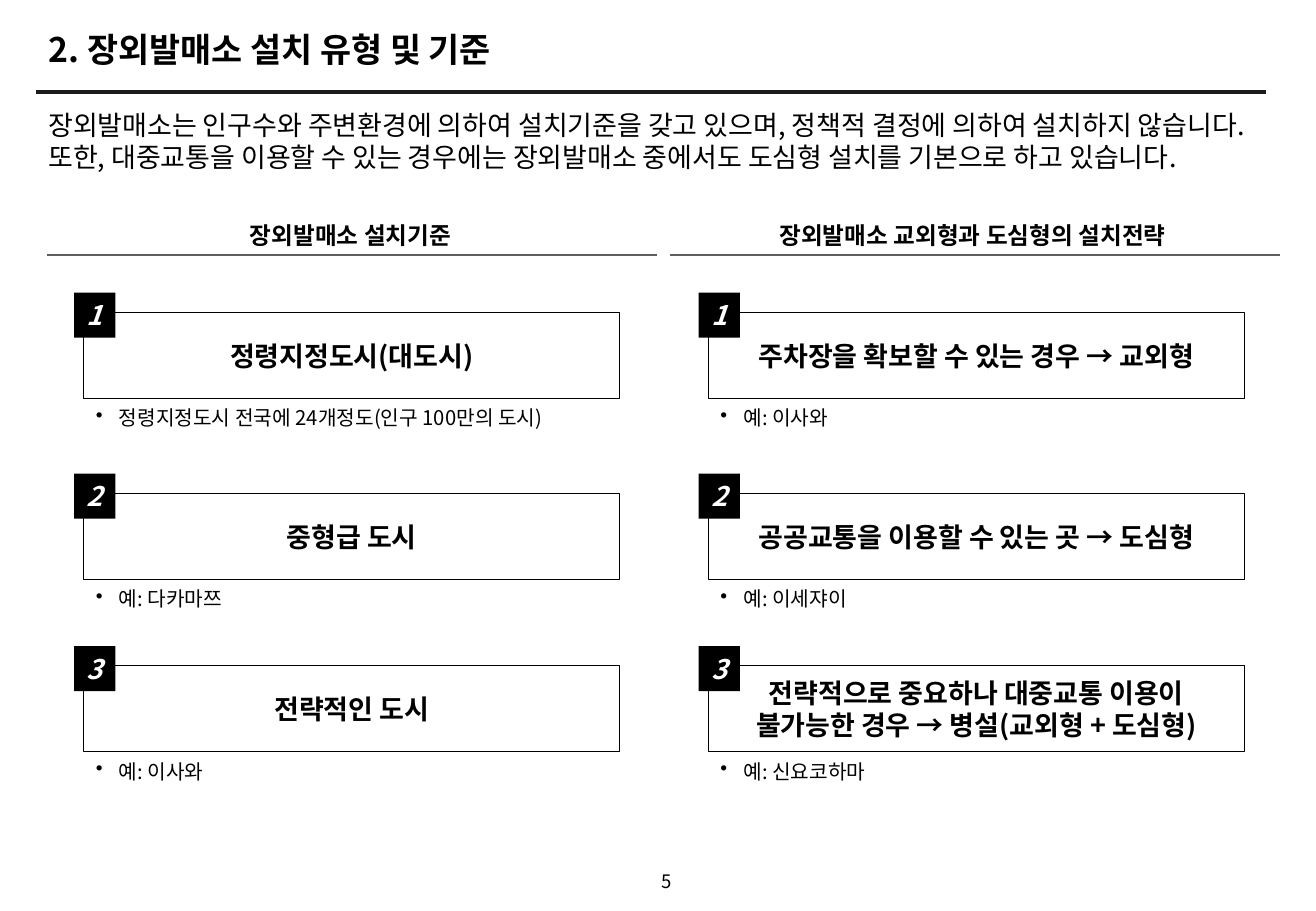
from lxml.etree import SubElement
from pptx import Presentation
from pptx.dml.color import RGBColor
from pptx.enum.shapes import MSO_CONNECTOR, MSO_SHAPE
from pptx.enum.text import MSO_ANCHOR, MSO_AUTO_SIZE, PP_ALIGN
from pptx.oxml.ns import qn
from pptx.util import Inches, Pt

BLACK = RGBColor(0x00, 0x00, 0x00)
WHITE = RGBColor(0xFF, 0xFF, 0xFF)
RULE_DARK = RGBColor(0x1C, 0x1C, 0x1C)
RULE_GRAY = RGBColor(0x5F, 0x5F, 0x5F)
FONT = "Noto Sans CJK KR"

INTRO = (
    "장외발매소는 인구수와 주변환경에 의하여 설치기준을 갖고 있으며, 정책적 결정에 의하여 "
    "설치하지 않습니다. 또한, 대중교통을 이용할 수 있는 경우에는 장외발매소 중에서도 "
    "도심형 설치를 기본으로 하고 있습니다."
)
CRITERION_TOPS = (2.57, 4.06, 5.48)
COLUMNS = (
    (0.39, 0.69, "장외발매소 설치기준", (
        ("정령지정도시(대도시)", "정령지정도시 전국에 24개정도(인구 100만의 도시)"),
        ("중형급 도시", "예: 다카마쯔"),
        ("전략적인 도시", "예: 이사와"),
    )),
    (5.51, 5.83, "장외발매소 교외형과 도심형의 설치전략", (
        ("주차장을 확보할 수 있는 경우 → 교외형", "예: 이사와"),
        ("공공교통을 이용할 수 있는 곳 → 도심형", "예: 이세쟈이"),
        ("전략적으로 중요하나 대중교통 이용이 불가능한 경우 → 병설(교외형 + 도심형)",
         "예: 신요코하마"),
    )),
)


def write(shape, text, size, color=BLACK, bold=False, italic=False,
          align=PP_ALIGN.LEFT, anchor=MSO_ANCHOR.MIDDLE, bullet=False):
    frame = shape.text_frame
    frame.text = text
    frame.word_wrap = True
    frame.auto_size = MSO_AUTO_SIZE.NONE
    frame.vertical_anchor = anchor
    paragraph = frame.paragraphs[0]
    paragraph.alignment = align
    if bullet:
        properties = paragraph._p.get_or_add_pPr()
        properties.set("marL", str(Inches(0.19)))
        properties.set("indent", str(Inches(-0.19)))
        SubElement(properties, qn("a:buChar")).set("char", "•")
    font = paragraph.font
    font.size = Pt(size)
    font.bold = bold
    font.italic = italic
    font.color.rgb = color
    font.name = FONT
    defaults = paragraph._p.pPr.find(qn("a:defRPr"))
    SubElement(defaults, qn("a:ea")).set("typeface", FONT)


def add_text(slide, left, top, width, height, text, size, **style):
    box = slide.shapes.add_textbox(Inches(left), Inches(top), Inches(width), Inches(height))
    write(box, text, size, **style)


def add_rule(slide, left, right, top, color, weight):
    rule = slide.shapes.add_connector(
        MSO_CONNECTOR.STRAIGHT, Inches(left), Inches(top), Inches(right), Inches(top))
    rule.line.color.rgb = color
    rule.line.width = Pt(weight)
    SubElement(rule._element.spPr, qn("a:effectLst"))


def add_block(slide, preset, left, top, width, height, fill):
    block = slide.shapes.add_shape(
        preset, Inches(left), Inches(top), Inches(width), Inches(height))
    block.shadow.inherit = False
    block.fill.solid()
    block.fill.fore_color.rgb = fill
    block.line.fill.background()
    return block


def add_criterion(slide, left, top, number, name, note):
    plate = add_block(slide, MSO_SHAPE.PENTAGON, left, top, 4.41, 0.71, WHITE)
    plate.adjustments[0] = 0
    plate.line.color.rgb = BLACK
    plate.line.width = Pt(0.75)
    write(plate, name, 16, bold=True, align=PP_ALIGN.CENTER)

    badge = add_block(slide, MSO_SHAPE.RECTANGLE, left - 0.08, top - 0.16, 0.34, 0.37, BLACK)
    badge.text_frame.margin_left = badge.text_frame.margin_right = 0
    write(badge, str(number), 16, color=WHITE, bold=True, italic=True, align=PP_ALIGN.CENTER)

    add_text(slide, left, top + 0.72, 4.41, 0.3, note, 12,
             anchor=MSO_ANCHOR.TOP, bullet=True)


def add_column(slide, heading_left, plate_left, heading, criteria):
    add_rule(slide, heading_left, heading_left + 5.02, 2.1, RULE_GRAY, 1.5)
    add_text(slide, heading_left, 1.78, 4.99, 0.31, heading, 14,
             bold=True, align=PP_ALIGN.CENTER)
    for number, (top, (name, note)) in enumerate(zip(CRITERION_TOPS, criteria), start=1):
        add_criterion(slide, plate_left, top, number, name, note)


def main():
    """Build the slide on branch office types and criteria."""
    deck = Presentation()
    deck.slide_width, deck.slide_height = Inches(10.83), Inches(7.5)
    slide = deck.slides.add_slide(deck.slide_layouts[5])

    title = slide.shapes.title
    title.left, title.top = Inches(0.3), Inches(0.13)
    title.width, title.height = Inches(9.75), Inches(0.55)
    write(title, "2. 장외발매소 설치 유형 및 기준", 20, bold=True)

    add_rule(slide, 0.3, 10.42, 0.76, RULE_DARK, 2.25)
    add_text(slide, 0.3, 0.84, 10.24, 0.58, INTRO, 16, anchor=MSO_ANCHOR.TOP)
    for column in COLUMNS:
        add_column(slide, *column)
    add_text(slide, 4.87, 7.06, 1.24, 0.39, "5", 11, align=PP_ALIGN.CENTER)

    deck.save("out.pptx")


if __name__ == "__main__":
    main()
